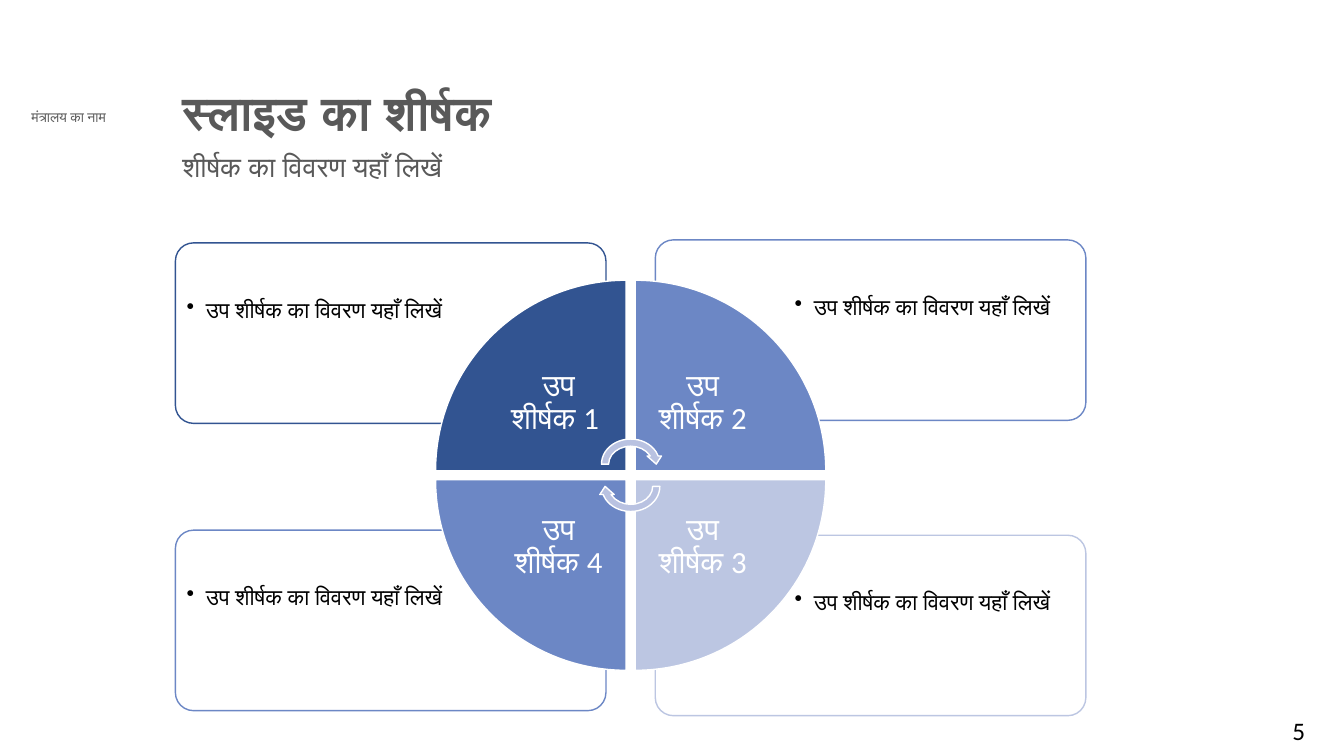
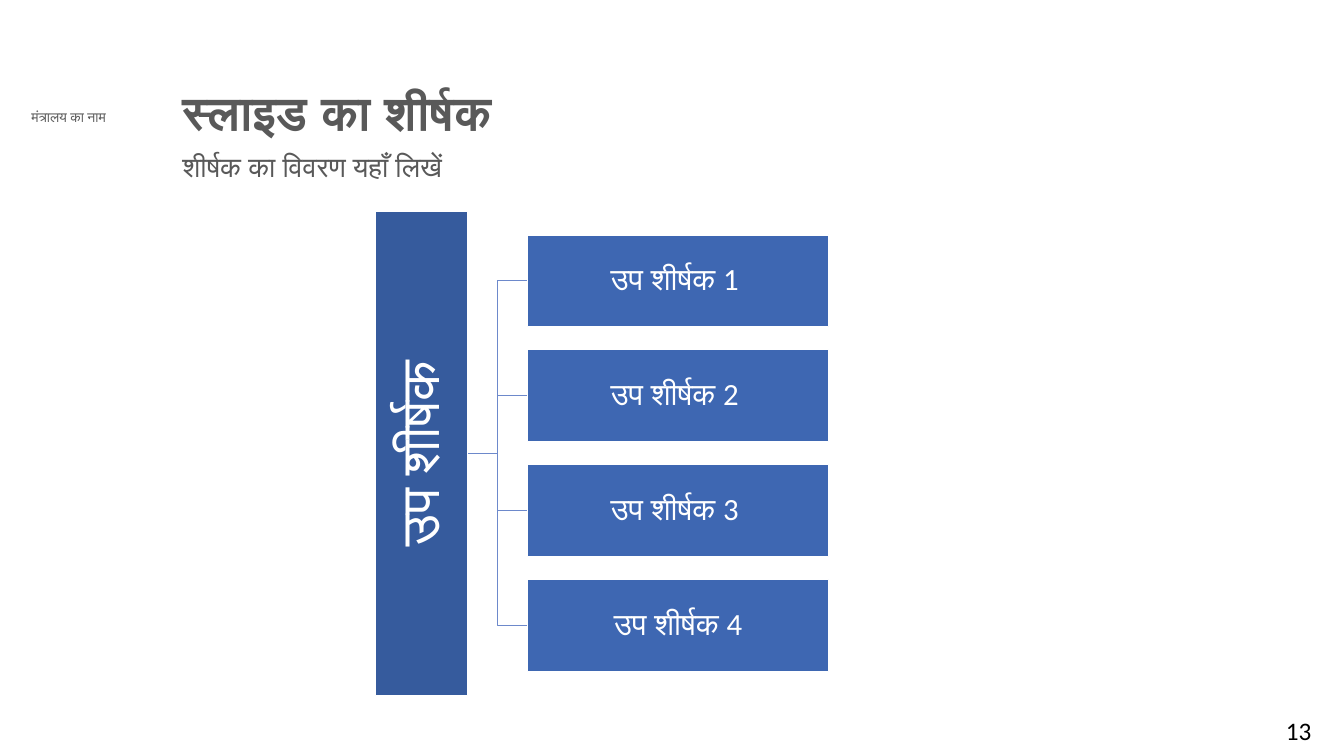
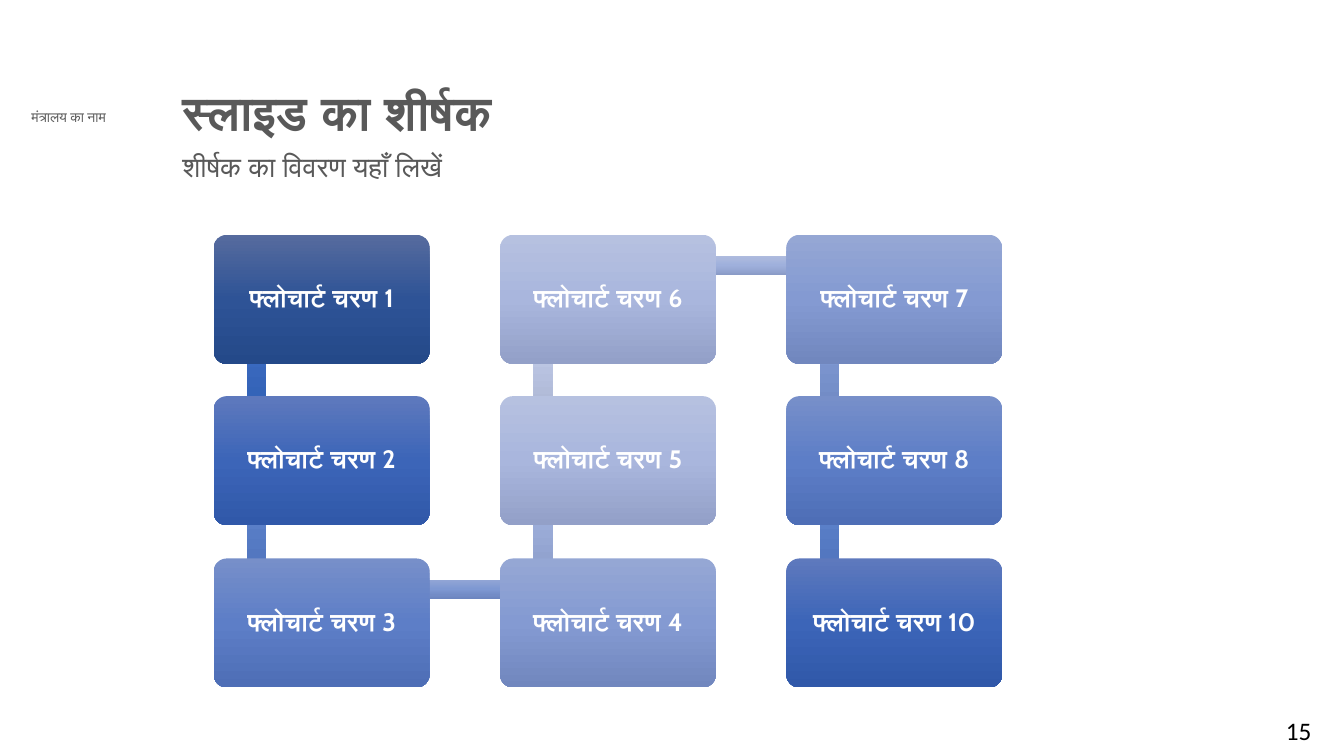
from copy import deepcopy
from dataclasses import dataclass

from lxml import etree
from pptx import Presentation
from pptx.dml.color import RGBColor
from pptx.enum.shapes import MSO_CONNECTOR, MSO_SHAPE
from pptx.enum.text import MSO_ANCHOR, PP_ALIGN
from pptx.oxml.ns import qn
from pptx.util import Pt

ELBOW = MSO_CONNECTOR.ELBOW
RECTANGLE = MSO_SHAPE.RECTANGLE
ROUNDED = MSO_SHAPE.ROUNDED_RECTANGLE
WEDGE = MSO_SHAPE.PIE_WEDGE
CIRCULAR_ARROW = MSO_SHAPE.CIRCULAR_ARROW
TOP, MIDDLE = MSO_ANCHOR.TOP, MSO_ANCHOR.MIDDLE
LEFT, CENTER = PP_ALIGN.LEFT, PP_ALIGN.CENTER
PX = 9144  # EMU in one px, 100 px to the inch


@dataclass(frozen=True)
class Theme:
    font: str = "Calibri"
    ministry_font: str = "Lato"
    step_font: str = "Cabin"
    white: str = "FFFFFF"
    black: str = "000000"
    heading: str = "595959"
    cycle_arrow: str = "B9C2E1"
    branch: str = "6D89CB"
    root: str = "365B9D"
    child: str = "3E67B2"
    title_size: int = 34
    subtitle_size: int = 20
    ministry_size: int = 10
    page_size: int = 18
    bullet_size: int = 16
    label_size: int = 22
    root_size: int = 39
    step_size: int = 18
    line: int = 1


THEME = Theme()

# Content
MINISTRY = "मंत्रालय का नाम"
TITLE = "स्लाइड का शीर्षक"
SUBTITLE = "शीर्षक का विवरण यहाँ लिखें"

DETAIL = "उप शीर्षक का विवरण यहाँ लिखें"
QUADRANTS = [  # clockwise: label, colour, column, row, top of card
    ("उप शीर्षक 1 ", "325491", 0, 0, 241),
    ("उप शीर्षक 2", "6C87C5", 1, 0, 238),
    ("उप शीर्षक 3", "BCC6E2", 1, 1, 531),
    ("उप शीर्षक 4", "6C87C5", 0, 1, 526),
]

ROOT = "उप शीर्षक"
CHILDREN = ["उप शीर्षक 1 ", "उप शीर्षक 2 ", "उप शीर्षक 3 ", "उप शीर्षक 4"]

STEP_NUMBERS = [1, 2, 3, 4, 5, 6, 7, 8, 10]
STEP_TONES = [0, 1, 2, 3, 4, 4, 3, 2, 1]
LINK_TONES = [0, 1, 2, 3, 4, 3, 2, 1]
STEP_GRADIENTS = [
    ("566B9E", "2E5396", "244989"),
    ("5E79BD", "3C65B8", "3058A9"),
    ("778FC9", "5D7EC7", "4E6EB6"),
    ("95A7D4", "849AD2", "7187BE"),
    ("B6C1E0", "A9B6DD", "93A0C8"),
]
LINK_GRADIENTS = [
    ("5E7EC4", "3B6BC1", "2F5EB1"),
    ("7691CC", "5C81CA", "4C70B9"),
    ("91A5D5", "7E98D2", "6C85BF"),
    ("AEBBDE", "9FB0DC", "8A9BC7"),
    ("CAD2E9", "BFC9E6", "A7B1CF"),
]


# Helpers
def scaled(*lengths):
    return [round(length * PX) for length in lengths]


def write(shape, text, size, color=THEME.white, font=THEME.font, bold=False,
          align=CENTER, anchor=MIDDLE, margins=(10, 5, 10, 5), spacing=0.9, bullet=False):
    frame = shape.text_frame
    frame.word_wrap = True
    frame.vertical_anchor = anchor
    (frame.margin_left, frame.margin_top,
     frame.margin_right, frame.margin_bottom) = scaled(*margins)
    para = frame.paragraphs[0]
    para.text = text
    para.alignment = align
    para.line_spacing = spacing
    if bullet:
        properties = para._p.get_or_add_pPr()
        indent = 19 * PX
        properties.set("marL", str(indent))
        properties.set("indent", str(-indent))
        etree.SubElement(properties, qn("a:buChar"), char="•")
    para.font.name = font
    para.font.size = Pt(size)
    para.font.bold = bold
    para.font.color.rgb = RGBColor.from_string(color)


def add_text(page, at, text, size, **style):
    box = page.shapes.add_textbox(*scaled(*at))
    write(box, text, size, **style)


def add_block(page, kind, at, fill, line=None, rotation=0):
    """Add a shape; fill is one colour or a tuple of gradient stops."""
    shape = page.shapes.add_shape(kind, *scaled(*at))
    shape.shadow.inherit = False
    shape.rotation = rotation
    if kind == ROUNDED:
        shape.adjustments[0] = 0.1
    if isinstance(fill, tuple):
        shape.fill.gradient()
        shape.fill.gradient_angle = 270
        stop_list = shape._element.spPr.find(".//" + qn("a:gsLst"))
        stop_list.append(deepcopy(stop_list[-1]))
        for index, (stop, color) in enumerate(zip(shape.fill.gradient_stops, fill)):
            stop.position = index / 2
            stop.color.rgb = RGBColor.from_string(color)
    else:
        shape.fill.solid()
        shape.fill.fore_color.rgb = RGBColor.from_string(fill)
    if line:
        shape.line.color.rgb = RGBColor.from_string(line)
        shape.line.width = Pt(THEME.line)
    else:
        shape.line.fill.background()
    return shape


def add_branch(page, start, end):
    branch = page.shapes.add_connector(ELBOW, *scaled(*start, *end))
    branch.line.color.rgb = RGBColor.from_string(THEME.branch)
    branch.line.width = Pt(THEME.line)
    etree.SubElement(branch._element.spPr, qn("a:effectLst"))


def add_page(deck, number):
    page = deck.slides.add_slide(deck.slide_layouts[6])
    add_text(page, (3, 103, 130, 27), MINISTRY, THEME.ministry_size, color=THEME.heading,
             font=THEME.ministry_font, anchor=TOP, spacing=1)
    add_text(page, (171, 84, 961, 55), TITLE, THEME.title_size, color=THEME.heading,
             bold=True, align=LEFT, anchor=TOP)
    add_text(page, (171, 147, 961, 63), SUBTITLE, THEME.subtitle_size, color=THEME.heading,
             align=LEFT, anchor=TOP)
    add_text(page, (1242, 705, 92, 45), str(number), THEME.page_size, color=THEME.black,
             anchor=TOP, spacing=1)
    return page


# Slides
def build_cycle(page):
    card_lefts, card_width, card_height = (174, 650), 427, 179
    wedge_lefts, wedge_tops, wedge_size = (432, 630), (278, 476), 189
    near, far_x, far_y = 6, 133, 50  # card margins away from and beside the wheel
    label_inset = 55
    label_size = wedge_size - label_inset

    for label, color, column, row, top in QUADRANTS:
        card = add_block(page, ROUNDED, (card_lefts[column], top, card_width, card_height),
                         THEME.white, color)
        left, right = (far_x, near) if column else (near, far_x)
        upper, lower = (far_y, near) if row else (near, far_y)
        write(card, DETAIL, THEME.bullet_size, color=THEME.black, align=LEFT,
              anchor=TOP if row else MIDDLE, margins=(left, upper, right, lower), bullet=True)

    for index, (label, color, column, row, top) in enumerate(QUADRANTS):
        left, top = wedge_lefts[column], wedge_tops[row]
        add_block(page, WEDGE, (left, top, wedge_size, wedge_size), color, THEME.white,
                  rotation=90 * index)
        label_left = left + label_inset * (1 - column)
        label_top = top + label_inset * (1 - row)
        add_text(page, (label_left, label_top, label_size, label_size), label,
                 THEME.label_size, margins=(17,) * 4)

    for top, rotation in ((432, 0), (454, 180)):
        add_block(page, CIRCULAR_ARROW, (593, top, 65, 57), THEME.cycle_arrow, THEME.white,
                  rotation)


def build_hierarchy(page):
    root_length, thickness = 480, 91
    root_center = (418, 450)
    child_left, child_top, child_width, child_pitch = 523, 233, 299, 114
    tops = [child_top + index * child_pitch for index in range(len(CHILDREN))]

    for top in tops:
        add_branch(page, (464, root_center[1]), (child_left, top + thickness / 2))

    root_at = (root_center[0] - root_length / 2, root_center[1] - thickness / 2,
               root_length, thickness)
    root = add_block(page, RECTANGLE, root_at, THEME.root, THEME.white, rotation=270)
    write(root, ROOT, THEME.root_size, margins=(3,) * 4)

    for text, top in zip(CHILDREN, tops):
        child = add_block(page, RECTANGLE, (child_left, top, child_width, thickness),
                          THEME.child, THEME.white)
        write(child, text, THEME.label_size, margins=(2,) * 4)


def build_flow(page):
    lefts, tops = (212, 496, 780), (233, 393, 554)
    step_width, step_height = 214, 128
    bar = 19

    # The path runs down, up and down again through the columns
    places = []
    for column, left in enumerate(lefts):
        column_tops = tops[::-1] if column % 2 else tops
        places += [(left, top) for top in column_tops]

    for (left, top), (next_left, next_top), tone in zip(places, places[1:], LINK_TONES):
        if left == next_left:
            at = (left + 33, min(top, next_top) + 32, bar, 159)
        else:
            at = (left + 43, top + 21, 283, bar)
        add_block(page, RECTANGLE, at, LINK_GRADIENTS[tone])

    for (left, top), number, tone in zip(places, STEP_NUMBERS, STEP_TONES):
        step = add_block(page, ROUNDED, (left, top, step_width, step_height),
                         STEP_GRADIENTS[tone])
        write(step, f"फ्लोचार्ट चरण {number}", THEME.step_size, font=THEME.step_font,
              bold=True, margins=(7,) * 4)


def main():
    deck = Presentation()
    deck.slide_width, deck.slide_height = scaled(1333, 750)
    for number, build in ((5, build_cycle), (13, build_hierarchy), (15, build_flow)):
        build(add_page(deck, number))
    deck.save("out.pptx")


if __name__ == "__main__":
    main()
